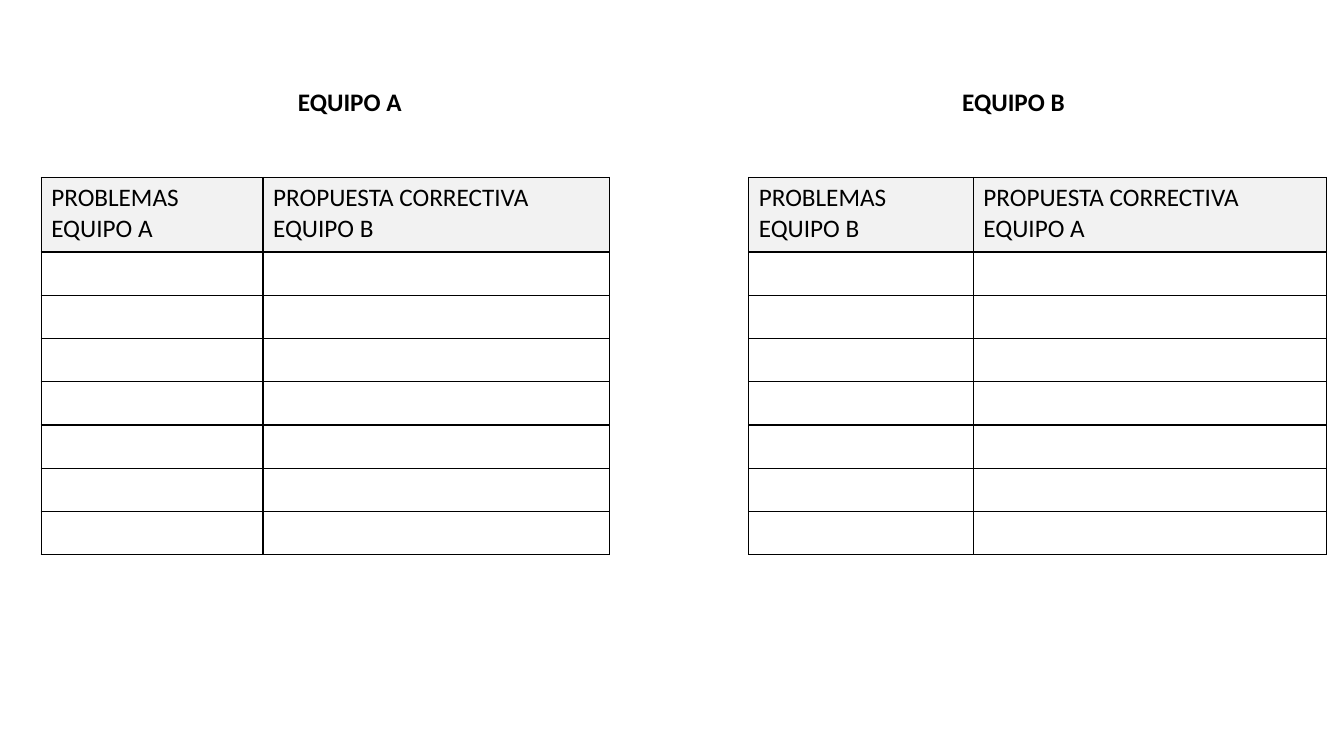
"""Builds a slide with two facing team tables of problems and corrective proposals."""
from lxml import etree
from pptx import Presentation
from pptx import util as u
from pptx.dml.color import RGBColor
from pptx.oxml.ns import qn

BLACK = RGBColor(0x00, 0x00, 0x00)
HEADER_GREY = RGBColor(0xF2, 0xF2, 0xF2)
HEADER_HEIGHT, ENTRY_HEIGHT = u.Cm(1.88), u.Cm(1.09)
ENTRIES = 7


def write(paragraph, wording, bold=False):
    run = paragraph.add_run()
    run.text = wording
    run.font.name = "Calibri"
    run.font.size = u.Pt(18)
    run.font.bold = bold
    run.font.color.rgb = BLACK


def outline(cell):
    properties = cell._tc.get_or_add_tcPr()
    for side in ("a:lnL", "a:lnR", "a:lnT", "a:lnB"):
        border = etree.SubElement(properties, qn(side), w=str(u.Pt(1)))
        solid = etree.SubElement(border, qn("a:solidFill"))
        etree.SubElement(solid, qn("a:srgbClr"), val=str(BLACK))


deck = Presentation()
deck.slide_width, deck.slide_height = u.Cm(33.87), u.Cm(19.05)
slide = deck.slides.add_slide(deck.slide_layouts[6])

teams = [
    ("A", "B", 7.26, 1.04, (5.59, 8.74)),
    ("B", "A", 24, 18.87, (5.66, 8.89)),
]

for team, rival, heading_left, grid_left, widths in teams:
    heading = slide.shapes.add_textbox(u.Cm(heading_left), u.Cm(2.06), u.Cm(3.53), u.Cm(1.02))
    heading.text_frame.word_wrap = True
    write(heading.text_frame.paragraphs[0], f"EQUIPO {team}", bold=True)

    grid = slide.shapes.add_table(
        ENTRIES + 1, 2, u.Cm(grid_left), u.Cm(4.47), u.Cm(sum(widths)),
        HEADER_HEIGHT + ENTRIES * ENTRY_HEIGHT).table
    grid.first_row = False
    grid.horz_banding = False
    for column, width in zip(grid.columns, widths):
        column.width = u.Cm(width)
    for number, row in enumerate(grid.rows):
        row.height = ENTRY_HEIGHT if number else HEADER_HEIGHT
        for cell in row.cells:
            outline(cell)
            if number:
                cell.fill.background()
            else:
                cell.fill.solid()
                cell.fill.fore_color.rgb = HEADER_GREY

    headers = (f"PROBLEMAS EQUIPO {team}", f"PROPUESTA CORRECTIVA EQUIPO {rival}")
    for cell, header in zip(grid.rows[0].cells, headers):
        write(cell.text_frame.paragraphs[0], header)

deck.save("out.pptx")
